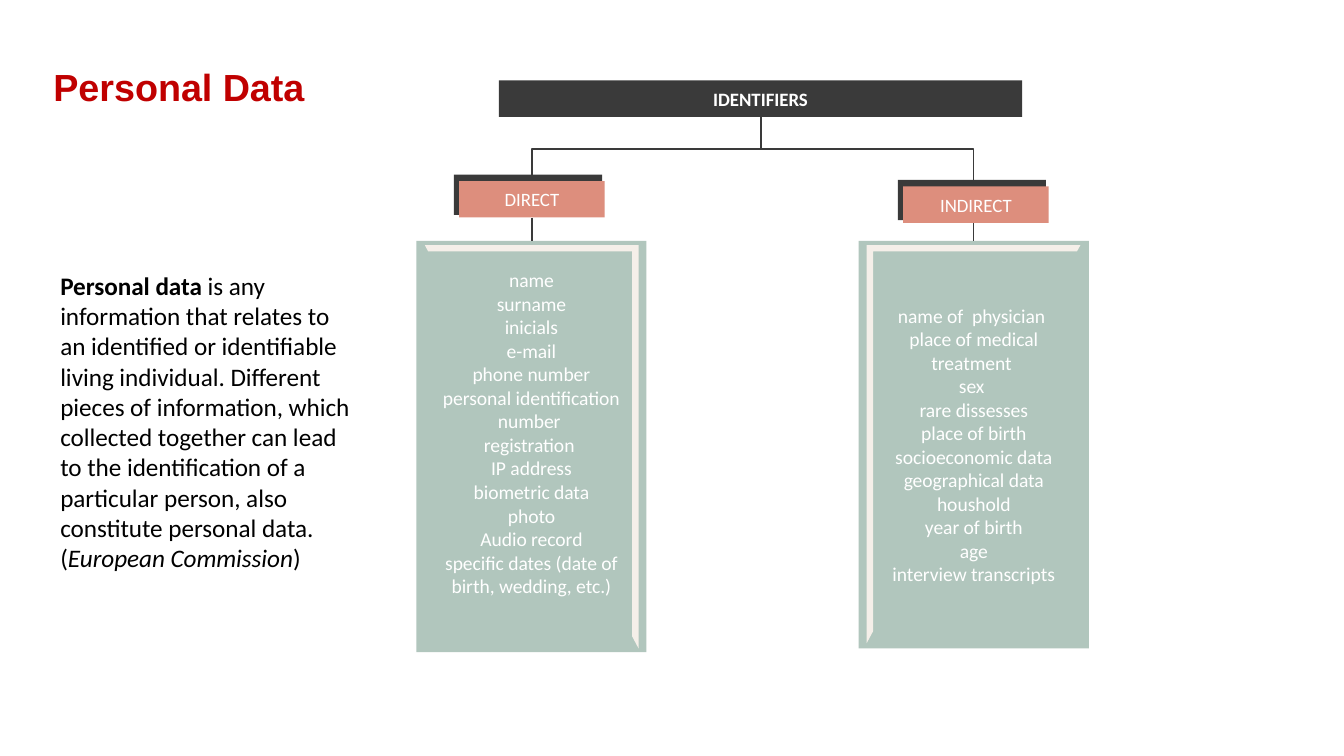
from lxml import etree
from pptx import Presentation
from pptx.dml.color import RGBColor
from pptx.enum.shapes import MSO_CONNECTOR as Link, MSO_SHAPE as Kind
from pptx.enum.text import MSO_ANCHOR as Anchor, PP_ALIGN as Align
from pptx.oxml.ns import qn
from pptx.util import Cm, Pt

DARK, CORAL, SAGE, CREAM = "3A3A3A", "DD8E7D", "B1C6BD", "F5EFE9"
WHITE, BLACK, RED = "FFFFFF", "000000", "C00000"

DIRECT = [
    "name", "surname", "inicials", "e-mail", "phone number",
    "personal identification number ", "registration ", "IP address",
    "biometric data", "photo", "Audio record",
    "specific dates (date of birth, wedding, etc.)",
]
INDIRECT = [
    "name of  physician ", "place of medical treatment ", "sex ",
    "rare dissesses", "place of birth",
    "socioeconomic data geographical data", "houshold", "year of birth",
    "age", "interview transcripts",
]
ROOT_X, ROOT_END = 14.38, 2.21
TAG_TOP, TAG_END, CARD_TOP = 3.43, 4.11, 4.55


def color(code):
    return RGBColor.from_string(code)


def add_run(para, text, size, code, face="Calibri", bold=False, italic=False):
    run = para.add_run()
    run.text = text
    font = run.font
    font.name, font.size = face, Pt(size)
    font.bold, font.italic = bold, italic
    font.color.rgb = color(code)


def add_box(slide, left, top, width, height, fill, kind=Kind.RECTANGLE):
    box = slide.shapes.add_shape(kind, Cm(left), Cm(top), Cm(width), Cm(height))
    box.shadow.inherit = False
    box.fill.solid()
    box.fill.fore_color.rgb = color(fill)
    box.line.fill.background()
    return box


def fill_lines(box, lines, size, bold=False):
    """Write centred white lines, one paragraph each."""
    frame = box.text_frame
    frame.word_wrap = True
    frame.vertical_anchor = Anchor.MIDDLE
    for i, line in enumerate(lines):
        para = frame.add_paragraph() if i else frame.paragraphs[0]
        para.alignment = Align.CENTER
        add_run(para, line, size, WHITE, bold=bold)


def add_text(slide, left, top, width, height, anchor):
    frame = slide.shapes.add_textbox(
        Cm(left), Cm(top), Cm(width), Cm(height)).text_frame
    frame.word_wrap = True
    frame.vertical_anchor = anchor
    return frame.paragraphs[0]


def add_line(slide, x1, y1, x2, y2, kind=Link.STRAIGHT):
    line = slide.shapes.add_connector(kind, Cm(x1), Cm(y1), Cm(x2), Cm(y2))
    line.line.color.rgb = color(DARK)
    line.line.width = Pt(1)
    etree.SubElement(line._element.spPr, qn("a:effectLst"))
    return line


def add_branch(slide, x1, y1, x2, y2):
    """Draw an elbow that leaves downwards, as a turned sideways elbow."""
    mid_x, mid_y = (x1 + x2) / 2, (y1 + y2) / 2
    right = x2 > x1
    half_w = (y2 - y1) / 2 * (-1 if right else 1)
    half_h = abs(x2 - x1) / 2
    line = add_line(slide, mid_x - half_w, mid_y - half_h,
                    mid_x + half_w, mid_y + half_h, Link.ELBOW)
    turn = 270 if right else 90
    line._element.spPr.find(qn("a:xfrm")).set("rot", str(turn * 60000))


def add_tag(slide, left, top, text):
    add_box(slide, left, top, 2.8, 0.76, DARK)
    tag = add_box(slide, left + 0.1, top + 0.12, 2.75, 0.69, CORAL)
    fill_lines(tag, [text], 10.1)


def add_card(slide, left, height, lines):
    card = add_box(slide, left, CARD_TOP, 4.35, height, SAGE)
    fill_lines(card, lines, 10.5)
    return card


def add_edge(slide, left, height, mirror=False):
    edge = add_box(slide, left, 4.63, 4.04, height, CREAM, Kind.HALF_FRAME)
    edge.adjustments[0], edge.adjustments[1] = 0.03, 0.03
    if mirror:
        edge._element.spPr.find(qn("a:xfrm")).set("flipH", "1")


def main():
    deck = Presentation()
    deck.slide_width, deck.slide_height = Cm(25.4), Cm(14.28)
    slide = deck.slides.add_slide(deck.slide_layouts[6])

    root = add_box(slide, 9.43, 1.52, 9.89, 0.69, DARK)
    fill_lines(root, ["IDENTIFIERS"], 10.1, bold=True)
    card = add_card(slide, 7.87, 7.77, DIRECT)
    card.text_frame.margin_bottom = Cm(0.64)
    add_card(slide, 16.23, 7.7, INDIRECT)

    for x in (18.4, 10.06):
        add_branch(slide, ROOT_X, ROOT_END, x, TAG_TOP)
        add_line(slide, x, TAG_END, x, CARD_TOP)
    add_tag(slide, 8.58, 3.3, "DIRECT")
    add_tag(slide, 16.97, 3.4, "INDIRECT")
    add_edge(slide, 8.03, 7.62, mirror=True)
    add_edge(slide, 16.38, 7.52)

    title = add_text(slide, 0.76, 0.3, 5.74, 2.77, Anchor.MIDDLE)
    title.line_spacing = 0.9
    add_run(title, "Personal Data", 20.2, RED, "Arial", bold=True)

    body = add_text(slide, 0.89, 4.98, 6.15, 6.02, Anchor.TOP)
    add_run(body, "Personal data ", 13.5, BLACK, bold=True)
    add_run(body, "is any information that relates to an identified or "
            "identifiable living individual. Different pieces of information, "
            "which collected together can lead to the identification of a "
            "particular person, also constitute personal data. (", 13.5, BLACK)
    add_run(body, "European Commission", 13.5, BLACK, italic=True)
    add_run(body, ")", 13.5, BLACK)

    deck.save("out.pptx")


if __name__ == "__main__":
    main()
